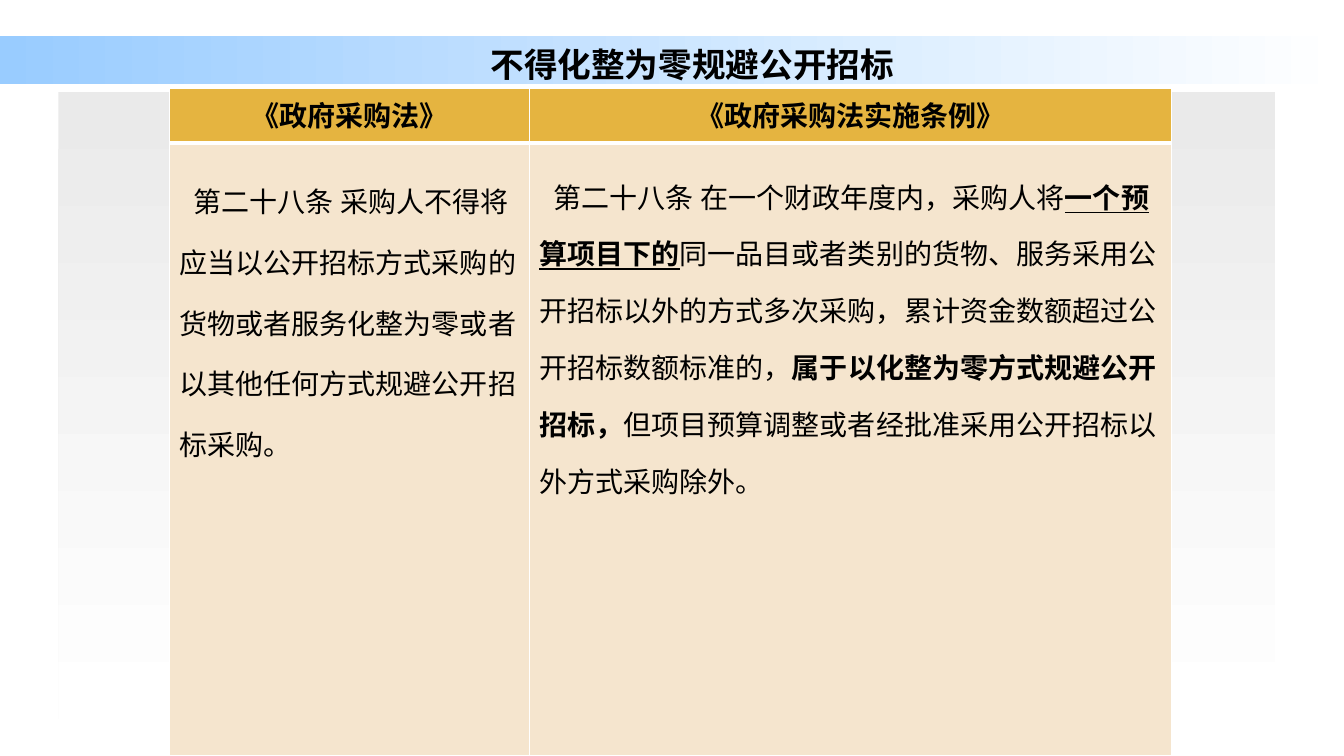
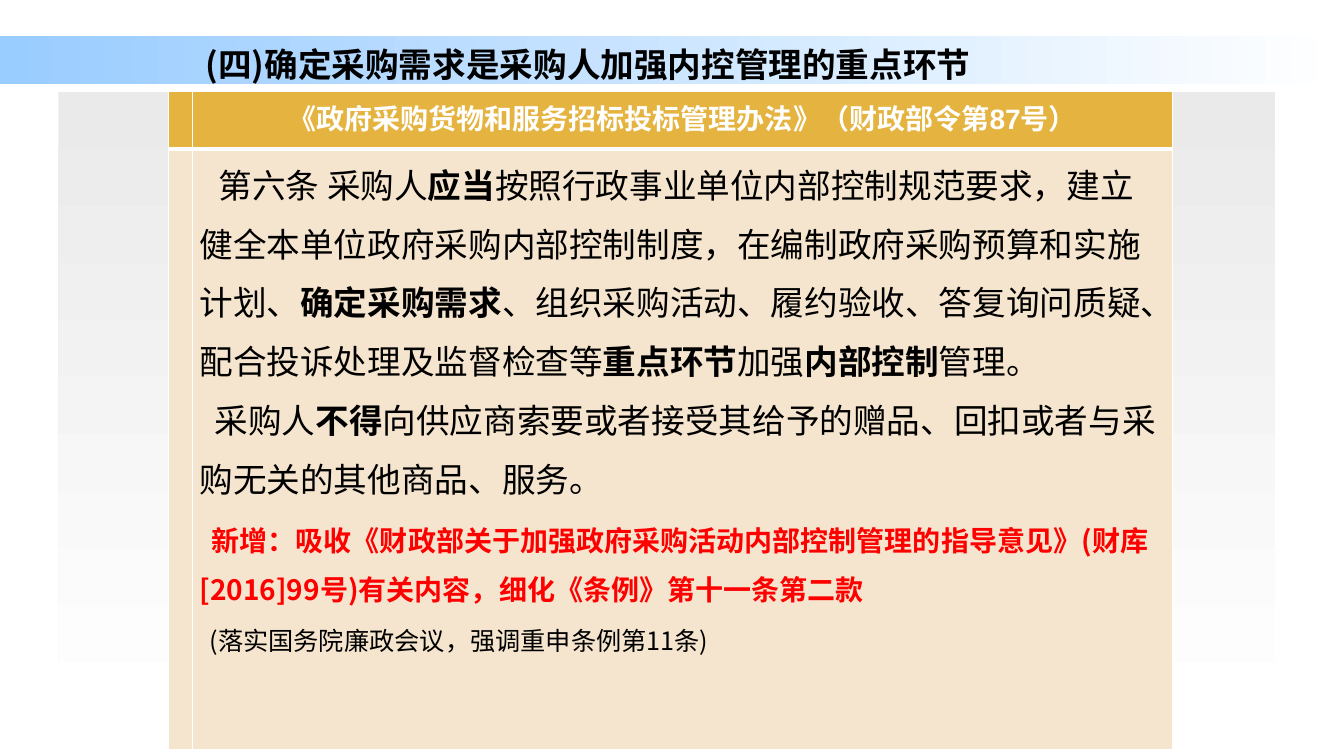
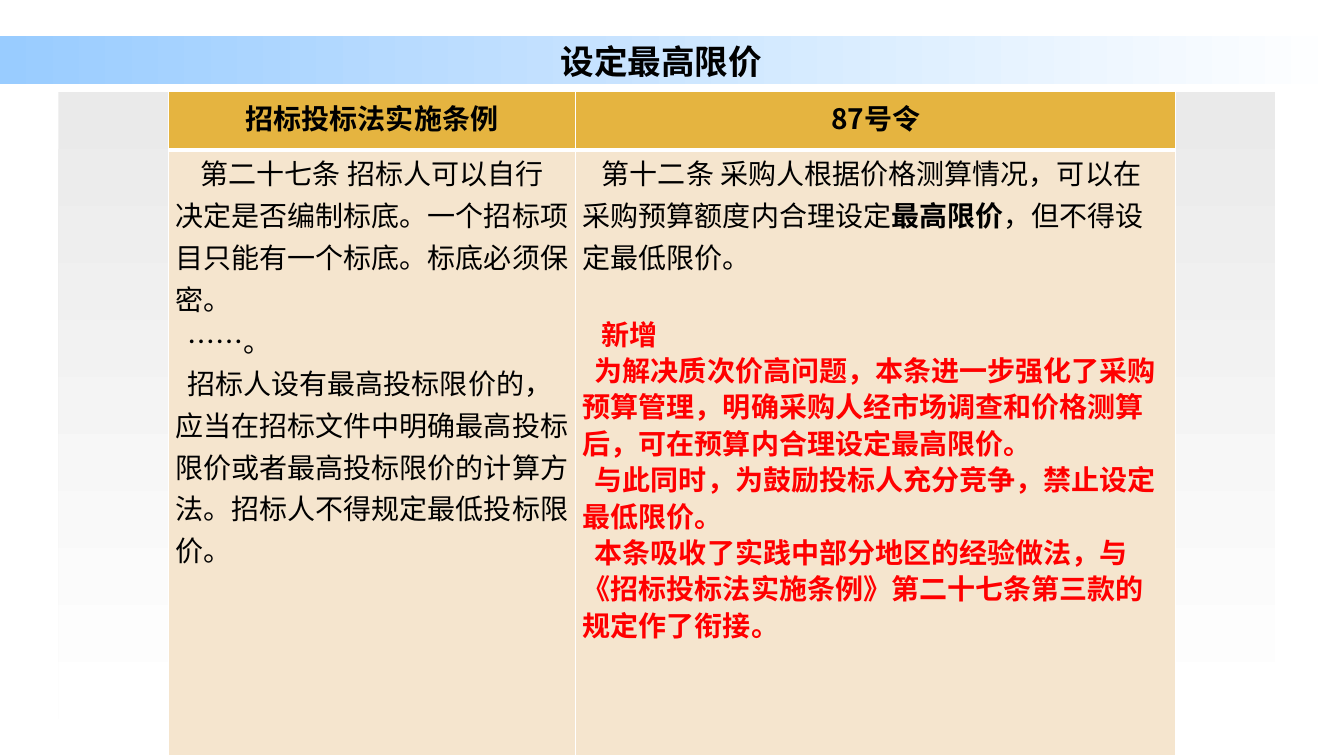
from dataclasses import dataclass, field

import lxml.etree
import pptx
import pptx.dml.color
import pptx.enum.lang
import pptx.enum.shapes
import pptx.enum.text
import pptx.oxml.ns
import pptx.util

ALIGN = pptx.enum.text.PP_ALIGN
BOLD = {"bold": True}
BOLD_UNDERLINE = {"bold": True, "underline": True}


@dataclass(frozen=True)
class Theme:
    font: str = "Noto Sans CJK SC"
    latin: str = "Arial"
    ink: str = "000000"
    paper: str = "FFFFFF"
    alert: str = "FF0000"
    panel: str = "EAEAEA"
    band: str = "99CCFF"
    header: str = "E5B440"
    body: str = "F5E5CE"
    title_size: int = 24
    large_size: int = 24
    text_size: int = 20
    note_size: int = 18
    thin: int = 1
    thick: int = 3


THEME = Theme()
ALERT = {"color": THEME.alert, "bold": True}


@dataclass
class Passage:
    spans: list
    indent: int = 0
    spacing: object = None
    before: int = 0
    align: object = ALIGN.LEFT
    style: dict = field(default_factory=dict)


def px(length):
    return pptx.util.Emu(length * 9144)


def rgb(color):
    return pptx.dml.color.RGBColor.from_string(color)


def add_span(para, text, *, size=THEME.text_size, color=THEME.ink, bold=False,
             underline=False, font=THEME.font):
    span = para.add_run()
    span.text = text
    span.font.size = pptx.util.Pt(size)
    span.font.color.rgb = rgb(color)
    span.font.bold = bold
    span.font.underline = underline
    span.font.name = font
    span.font.language_id = pptx.enum.lang.MSO_LANGUAGE_ID.SIMPLIFIED_CHINESE
    east_asian = lxml.etree.SubElement(span.font._element, pptx.oxml.ns.qn("a:ea"))
    east_asian.set("typeface", THEME.font)


def heading(text, **style):
    return [Passage([text], align=ALIGN.CENTER, style={**BOLD, **style})]


class Deck:
    def __init__(self, theme):
        self.theme = theme
        self.file = pptx.Presentation()
        self.file.slide_width = px(1333)
        self.file.slide_height = px(750)
        self.page = None

    def open_page(self):
        self.page = self.file.slides.add_slide(self.file.slide_layouts[6])
        self.gradient_box(58, 91, 1207, 622, self.theme.panel, 270)
        self.gradient_box(0, 36, 1333, 47, self.theme.band, 0)

    def gradient_box(self, left, top, width, height, color, angle):
        box = self.page.shapes.add_shape(
            pptx.enum.shapes.MSO_SHAPE.RECTANGLE,
            px(left), px(top), px(width), px(height))
        box.shadow.inherit = False
        box.line.fill.background()
        box.fill.gradient()
        box.fill.gradient_angle = angle
        for position, (stop, tint) in enumerate(
                zip(box.fill.gradient_stops, (color, self.theme.paper))):
            stop.position = position
            stop.color.rgb = rgb(tint)

    def title(self, text, left, top, width, height, align=ALIGN.CENTER):
        box = self.page.shapes.add_textbox(px(left), px(top), px(width), px(height))
        frame = box.text_frame
        frame.word_wrap = True
        frame.vertical_anchor = pptx.enum.text.MSO_ANCHOR.MIDDLE
        style = {"size": self.theme.title_size, **BOLD}
        self.passages(frame, [Passage([text], align=align, style=style)])

    def passages(self, frame, passages):
        for index, passage in enumerate(passages):
            para = frame.add_paragraph() if index else frame.paragraphs[0]
            para.alignment = passage.align
            para.space_before = pptx.util.Pt(passage.before)
            if passage.spacing:
                para.line_spacing = passage.spacing
            if passage.indent:
                properties = para._p.get_or_add_pPr()
                properties.set("marL", "0")
                properties.set("indent", str(px(passage.indent)))
            for span in passage.spans:
                text, style = (span, {}) if isinstance(span, str) else span
                add_span(para, text, **{**passage.style, **style})

    def table(self, left, top, columns, rows, cells, body_margins):
        table = self.page.shapes.add_table(
            len(rows), len(columns), px(left), px(top),
            px(sum(columns)), px(sum(rows))).table
        table.horz_banding = False
        for column, width in zip(table.columns, columns):
            column.width = px(width)
        for row, height in zip(table.rows, rows):
            row.height = px(height)
        for row_index, row_cells in enumerate(cells):
            is_header = row_index == 0
            for column_index, passages in enumerate(row_cells):
                cell = table.cell(row_index, column_index)
                self.borders(cell, is_header)
                cell.fill.solid()
                cell.fill.fore_color.rgb = rgb(
                    self.theme.header if is_header else self.theme.body)
                side, upper, lower = (10, 5, 5) if is_header else body_margins
                cell.margin_left = cell.margin_right = px(side)
                cell.margin_top, cell.margin_bottom = px(upper), px(lower)
                self.passages(cell.text_frame, passages)

    def borders(self, cell, is_header):
        thin, thick = self.theme.thin, self.theme.thick
        widths = {"lnL": thin, "lnR": thin,
                  "lnT": thin if is_header else thick,
                  "lnB": thick if is_header else thin}
        properties = cell._tc.get_or_add_tcPr()
        for tag, width in widths.items():
            line = lxml.etree.SubElement(properties, pptx.oxml.ns.qn("a:" + tag))
            line.set("w", str(pptx.util.Pt(width)))
            fill = lxml.etree.SubElement(line, pptx.oxml.ns.qn("a:solidFill"))
            color = lxml.etree.SubElement(fill, pptx.oxml.ns.qn("a:srgbClr"))
            color.set("val", self.theme.paper)


def splitting_page(deck):
    deck.open_page()
    deck.title("不得化整为零规避公开招标", 297, 13, 779, 101)
    law = [Passage([
        "第二十八条 采购人不得将应当以公开招标方式采购的货物或者服务化整为零"
        "或者以其他任何方式规避公开招标采购。"], indent=14, spacing=1.5)]
    regulation = [Passage([
        "第二十八条 在一个财政年度内，采购人将",
        ("一个预算项目下的", BOLD_UNDERLINE),
        "同一品目或者类别的货物、服务采用公开招标以外的方式多次采购，"
        "累计资金数额超过公开招标数额标准的，",
        ("属于以化整为零方式规避公开招标，", BOLD),
        "但项目预算调整或者经批准采用公开招标以外方式采购除外。",
    ], indent=14, spacing=1.4)]
    deck.table(168, 88, [357, 637], [54, 608],
               [[heading("《政府采购法》"), heading("《政府采购法实施条例》")],
                [law, regulation]], (10, 16, 5))


def control_page(deck):
    theme = deck.theme
    deck.open_page()
    deck.title("(四)确定采购需求是采购人加强内控管理的重点环节",
               194, 1, 900, 125, ALIGN.LEFT)
    wide, close = pptx.util.Pt(42), pptx.util.Pt(35)
    large = {"size": theme.large_size}
    article = [
        Passage([
            "第六条 采购人", ("应当", BOLD),
            "按照行政事业单位内部控制规范要求，建立健全本单位政府采购内部控制制度，"
            "在编制政府采购预算和实施计划、",
            ("确定采购需求", BOLD),
            "、组织采购活动、履约验收、答复询问质疑、配合投诉处理及监督检查等",
            ("重点环节", BOLD), "加强", ("内部控制", BOLD), "管理。",
        ], indent=19, spacing=wide, style=large),
        Passage([
            "采购人", ("不得", BOLD),
            "向供应商索要或者接受其给予的赠品、回扣或者与采购无关的其他商品、服务。",
        ], indent=15, spacing=wide, style=large),
        Passage([
            "新增：吸收《财政部关于加强政府采购活动内部控制管理的指导意见》"
            "(财库[2016]99号)有关内容，细化《条例》第十一条第二款",
        ], indent=12, spacing=close, before=6, style=ALERT),
        Passage(["(落实国务院廉政会议，强调重申条例第11条)"],
                indent=10, spacing=close, style={"size": theme.note_size}),
    ]
    caption = heading("《政府采购货物和服务招标投标管理办法》（财政部令第87号）",
                      color=theme.paper, font=theme.latin)
    deck.table(167, 91, [23, 972], [57, 596],
               [[[], caption], [[], article]], (7, 0, 0))


def price_page(deck):
    deck.open_page()
    deck.title("设定最高限价", 206, -2, 900, 125)
    wide, close = pptx.util.Pt(30), pptx.util.Pt(26)
    regulation = [Passage([text], indent=indent, spacing=wide) for text, indent in (
        ("第二十七条 招标人可以自行决定是否编制标底。一个招标项目只能有一个标底。"
         "标底必须保密。", 25),
        ("……。", 12),
        ("招标人设有最高投标限价的，应当在招标文件中明确最高投标限价"
         "或者最高投标限价的计算方法。招标人不得规定最低投标限价。", 12),
    )]
    order = [Passage([
        "第十二条 采购人根据价格测算情况，可以在采购预算额度内合理设定",
        ("最高限价", BOLD), "，但不得设定最低限价。",
    ], indent=19, spacing=wide)]
    order += [Passage([text], indent=indent, spacing=close, before=before, style=ALERT)
              for text, indent, before in (
        ("新增", 19, 29),
        ("为解决质次价高问题，本条进一步强化了采购预算管理，"
         "明确采购人经市场调查和价格测算后，可在预算内合理设定最高限价。", 12, 0),
        ("与此同时，为鼓励投标人充分竞争，禁止设定最低限价。", 12, 0),
        ("本条吸收了实践中部分地区的经验做法，"
         "与《招标投标法实施条例》第二十七条第三款的规定作了衔接。", 12, 0),
    )]
    deck.table(167, 91, [404, 595], [58, 601],
               [[heading("招标投标法实施条例"), heading("87号令")],
                [regulation, order]], (7, 0, 0))


def main():
    deck = Deck(THEME)
    for build in (splitting_page, control_page, price_page):
        build(deck)
    deck.file.save("out.pptx")


if __name__ == "__main__":
    main()
